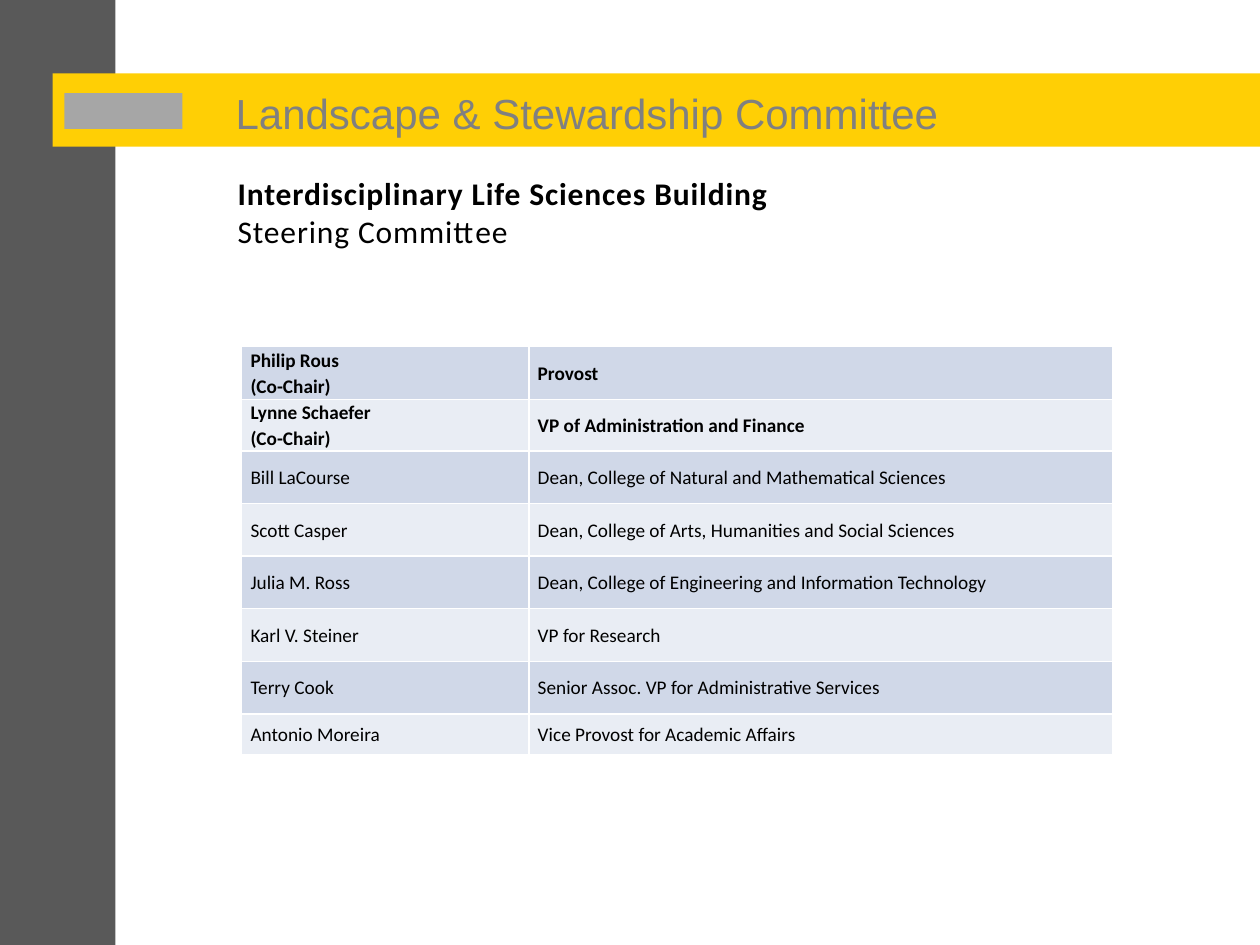
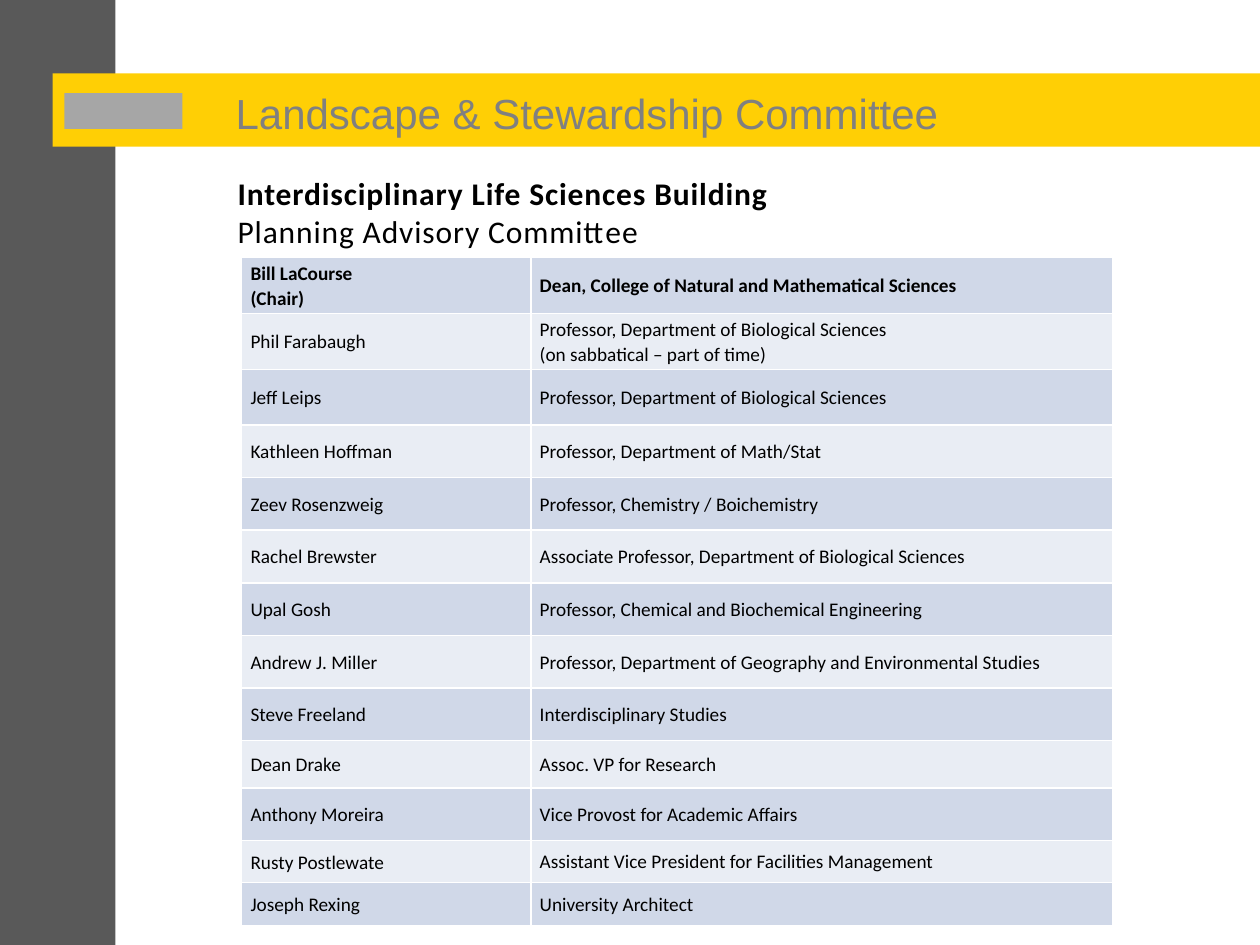
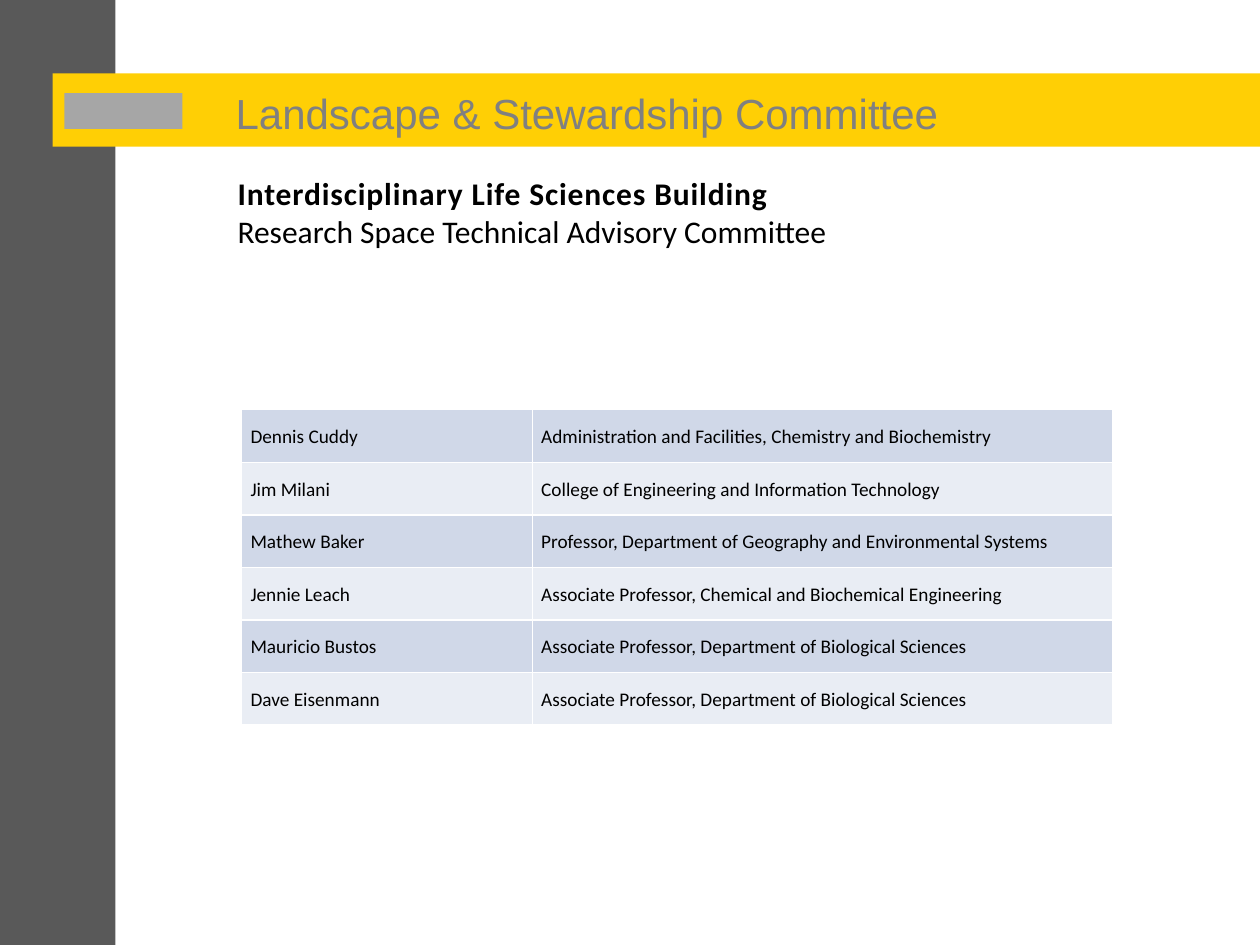
from lxml import etree
from pptx import Presentation
from pptx import util as u
from pptx.dml.color import RGBColor
from pptx.enum import shapes, text
from pptx.oxml.ns import qn

COLORS = {
    "sidebar": "595959",
    "band": "FFCF05",
    "badge": "A6A6A6",
    "title": "808080",
    "body": "000000",
    "odd row": "D0D8E8",
    "even row": "E9EDF4",
    "border": "FFFFFF",
}
ROW = 1.06  # usual row height in cm

# Left, top, width and height in cm of the plain bars on every slide.
BARS = {
    "sidebar": (0, 0, 2.33, 19.05),
    "band": (1.06, 1.48, 24.34, 1.48),
    "badge": (1.3, 1.88, 2.38, 0.72),
}

# Each member: name, role, row height in cm; the chairs come first and are bold.
committees = [
    {
        "name": "Steering Committee", "spacing": 50, "heading width": 11.56,
        "top": 6.99, "columns": (5.79, 11.77), "chairs": 2,
        "members": [
            ("Philip Rous\n(Co-Chair)", "Provost", ROW),
            ("Lynne Schaefer\n(Co-Chair)", "VP of Administration and Finance", 1.04),
            ("Bill LaCourse", "Dean, College of Natural and Mathematical Sciences", ROW),
            ("Scott Casper", "Dean, College of Arts, Humanities and Social Sciences", ROW),
            ("Julia M. Ross", "Dean, College of Engineering and Information Technology", ROW),
            ("Karl V. Steiner", "VP for Research", ROW),
            ("Terry Cook", "Senior Assoc. VP for Administrative Services", ROW),
            ("Antonio Moreira", "Vice Provost for Academic Affairs", 0.83),
        ],
    },
    {
        "name": "Planning Advisory Committee", "spacing": 50, "heading width": 11.56,
        "top": 5.19, "columns": (5.83, 11.73), "chairs": 1,
        "members": [
            ("Bill LaCourse\n(Chair)", "Dean, College of Natural and Mathematical Sciences", 1.13),
            ("Phil Farabaugh",
             "Professor, Department of Biological Sciences\n(on sabbatical – part of time)", 1.13),
            ("Jeff Leips", "Professor, Department of Biological Sciences", 1.12),
            ("Kathleen Hoffman", "Professor, Department of Math/Stat", ROW),
            ("Zeev Rosenzweig", "Professor, Chemistry / Boichemistry", ROW),
            ("Rachel Brewster", "Associate Professor, Department of Biological Sciences", ROW),
            ("Upal Gosh", "Professor, Chemical and Biochemical Engineering", ROW),
            ("Andrew J. Miller",
             "Professor, Department of Geography and Environmental Studies", ROW),
            ("Steve Freeland", "Interdisciplinary Studies", ROW),
            ("Dean Drake", "Assoc. VP for Research", 0.96),
            ("Anthony Moreira", "Vice Provost for Academic Affairs", ROW),
            ("Rusty Postlewate", "Assistant Vice President for Facilities Management", 0.84),
            ("Joseph Rexing", "University Architect", 0.88),
        ],
    },
    {
        "name": "Research Space Technical Advisory Committee", "spacing": 0, "heading width": 14.3,
        "top": 8.26, "columns": (5.86, 11.7), "chairs": 0,
        "members": [
            ("Dennis Cuddy", "Administration and Facilities, Chemistry and Biochemistry", ROW),
            ("Jim Milani", "College of Engineering and Information Technology", ROW),
            ("Mathew Baker",
             "Professor, Department of Geography and Environmental Systems", ROW),
            ("Jennie Leach", "Associate Professor, Chemical and Biochemical Engineering", ROW),
            ("Mauricio Bustos", "Associate Professor, Department of Biological Sciences", ROW),
            ("Dave Eisenmann", "Associate Professor, Department of Biological Sciences", ROW),
        ],
    },
]


def style_text(paragraph, font, size, color, bold=False, spacing=0):
    """Format every run; spacing is between letters, in hundredths of a point."""
    for span in paragraph.runs:
        span.font.name = font
        span.font.size = u.Pt(size)
        span.font.bold = bold
        span.font.color.rgb = RGBColor.from_string(COLORS[color])
        if spacing:
            span.font._element.set("spc", str(spacing))


def add_text(page, left, top, width, height, content):
    box = page.shapes.add_textbox(u.Cm(left), u.Cm(top), u.Cm(width), u.Cm(height))
    box.text_frame.word_wrap = True
    box.text_frame.auto_size = text.MSO_AUTO_SIZE.SHAPE_TO_FIT_TEXT
    box.text_frame.text = content
    return box.text_frame.paragraphs


deck = Presentation()
deck.slide_width, deck.slide_height = u.Cm(25.4), u.Cm(19.05)

for committee in committees:
    page = deck.slides.add_slide(deck.slide_layouts[6])

    for color, frame in BARS.items():
        bar = page.shapes.add_shape(shapes.MSO_SHAPE.RECTANGLE, *map(u.Cm, frame))
        bar.shadow.inherit = False
        bar.fill.solid()
        bar.fill.fore_color.rgb = RGBColor.from_string(COLORS[color])
        bar.line.fill.background()

    title, = add_text(page, 4.5, 1.63, 20.12, 1.27, "Landscape & Stewardship Committee")
    style_text(title, "Arial", 24, "title")
    building, group = add_text(page, 4.54, 3.38, committee["heading width"], 1.8,
                               "Interdisciplinary Life Sciences Building\n" + committee["name"])
    style_text(building, "Calibri", 18, "body", bold=True, spacing=50)
    style_text(group, "Calibri", 18, "body", spacing=committee["spacing"])

    members = committee["members"]
    table = page.shapes.add_table(
        len(members), 2, u.Cm(4.87), u.Cm(committee["top"]), u.Cm(sum(committee["columns"])),
        u.Cm(sum(height for *_, height in members))).table
    table.first_row = table.horz_banding = False
    for column, width in zip(table.columns, committee["columns"]):
        column.width = u.Cm(width)

    for index, (name, role, height) in enumerate(members):
        table.rows[index].height = u.Cm(height)
        for cell, content in zip(table.rows[index].cells, (name, role)):
            cell.text_frame.text = content
            cell.vertical_anchor = text.MSO_ANCHOR.MIDDLE
            cell.margin_left = cell.margin_right = u.Cm(0.18)
            cell.margin_top = cell.margin_bottom = 0
            for paragraph in cell.text_frame.paragraphs:
                paragraph.line_spacing = 1.07
                style_text(paragraph, "Calibri", 11, "body", bold=index < committee["chairs"])
            properties = cell._tc.get_or_add_tcPr()
            for side in ("lnL", "lnR", "lnT", "lnB"):
                border = etree.SubElement(properties, qn("a:" + side), w=str(u.Pt(1)))
                fill = etree.SubElement(border, qn("a:solidFill"))
                etree.SubElement(fill, qn("a:srgbClr"), val=COLORS["border"])
            cell.fill.solid()
            cell.fill.fore_color.rgb = RGBColor.from_string(
                COLORS["even row" if index % 2 else "odd row"])
            if name == "Rusty Postlewate" and content == role:
                cell.text_frame.paragraphs[0].line_spacing = u.Pt(13.7)

deck.save("out.pptx")
